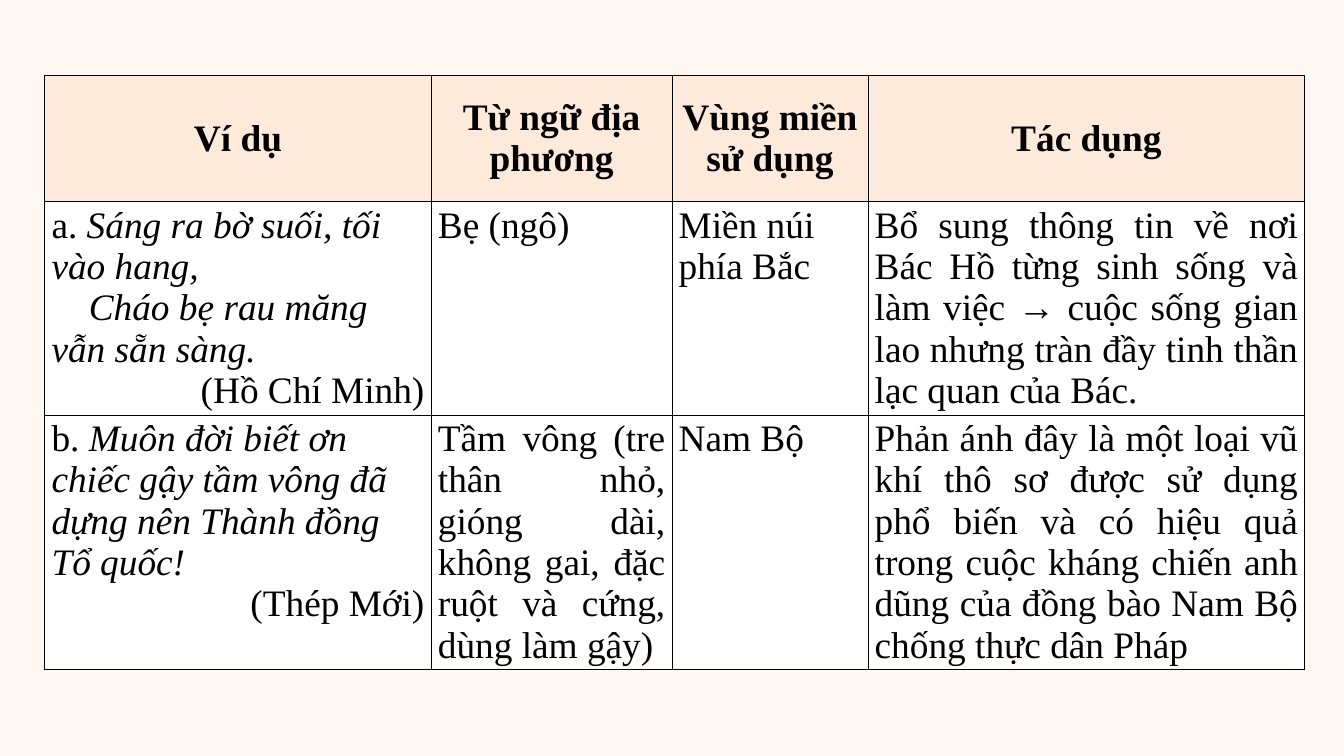
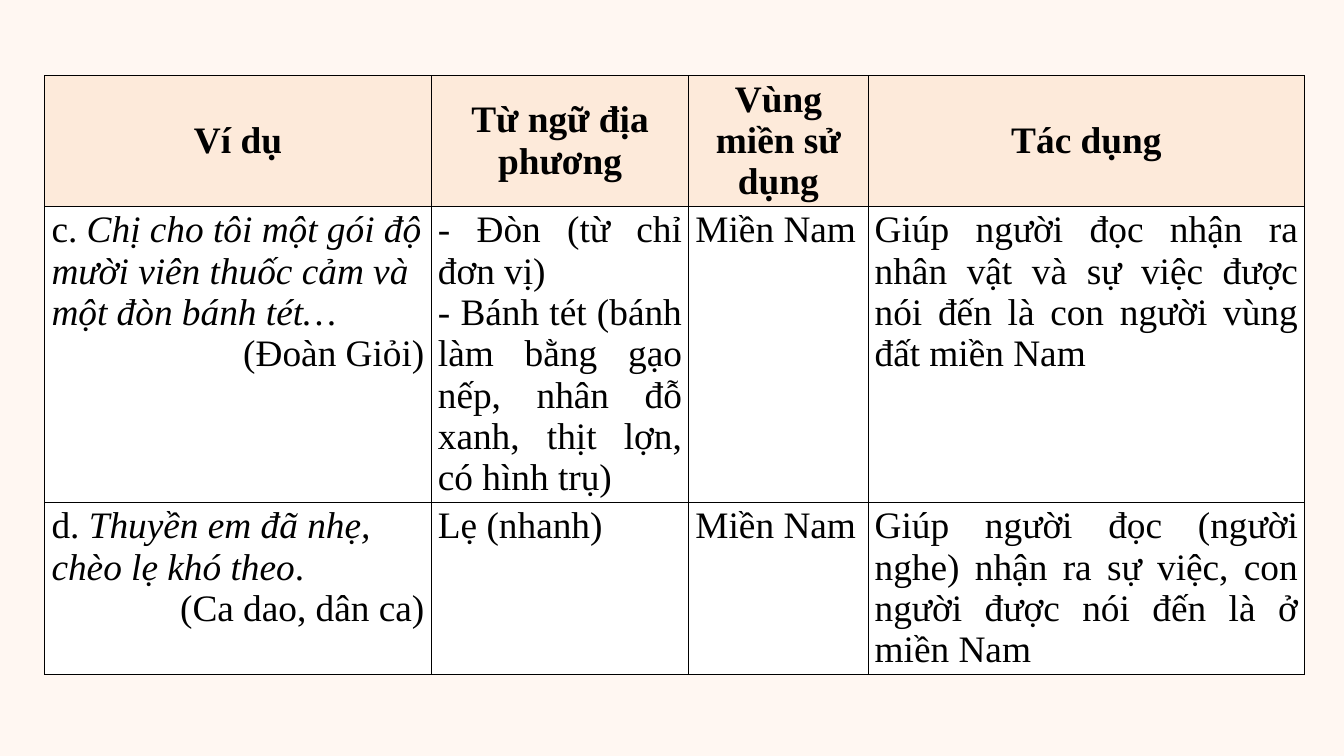
from dataclasses import dataclass

from lxml import etree
from pptx import Presentation
from pptx.dml.color import RGBColor
from pptx.enum import text
from pptx.oxml import ns
from pptx.util import Pt

# Shared look
CREAM = RGBColor(0xFF, 0xF7, 0xF2)
PEACH = RGBColor(0xFD, 0xEA, 0xDA)
WHITE = RGBColor(0xFF, 0xFF, 0xFF)
BLACK = RGBColor(0x00, 0x00, 0x00)
FONT = "Times New Roman"
SIZE = Pt(40)
BORDER = Pt(1)
LEFT, TOP, ROW_HEIGHT = Pt(48), Pt(81), Pt(135)
BLANK_LAYOUT = 6
ALIGN = text.PP_ALIGN


@dataclass(frozen=True)
class Span:
    words: str
    italic: bool = False
    bold: bool = False


@dataclass(frozen=True)
class Para:
    spans: tuple[Span, ...]
    align: ALIGN = ALIGN.LEFT
    indent: int = 0


Cell = tuple[Para, ...]


@dataclass(frozen=True)
class Grid:
    widths: tuple[int, ...]
    height: int
    rows: tuple[tuple[Cell, ...], ...]


# Kinds of cell
def plain(words: str, align: ALIGN = ALIGN.LEFT, bold: bool = False) -> Para:
    return Para((Span(words, bold=bold),), align)


def quote(label: str, words: str, end: str = "") -> Para:
    spans = (Span(f"{label}. "), Span(words, italic=True))
    return Para(spans + ((Span(end),) if end else ()))


def source(name: str) -> Para:
    return plain(f"({name})", ALIGN.RIGHT)


def justified(*lines: str) -> Cell:
    return tuple(plain(line, ALIGN.JUSTIFY) for line in lines)


HEADER = tuple(
    (plain(title, ALIGN.CENTER, bold=True),)
    for title in ("Ví dụ", "Từ ngữ địa phương", "Vùng miền sử dụng", "Tác dụng")
)

GRIDS = (
    Grid((414, 258, 210, 468), 678, (
        (
            (
                quote("a", "Sáng ra bờ suối, tối vào hang,"),
                Para((Span("Cháo bẹ rau măng vẫn sẵn sàng.", italic=True),), indent=40),
                source("Hồ Chí Minh"),
            ),
            justified("Bẹ (ngô)"),
            (plain("Miền núi phía Bắc"),),
            justified("Bổ sung thông tin về nơi Bác Hồ từng sinh sống và làm việc → "
                      "cuộc sống gian lao nhưng tràn đầy tinh thần lạc quan của Bác."),
        ),
        (
            (
                quote("b", "Muôn đời biết ơn chiếc gậy tầm vông đã dựng nên "
                           "Thành đồng Tổ quốc!"),
                source("Thép Mới"),
            ),
            justified("Tầm vông (tre thân nhỏ, gióng dài, không gai, "
                      "đặc ruột và cứng, dùng làm gậy)"),
            (plain("Nam Bộ"),),
            justified("Phản ánh đây là một loại vũ khí thô sơ được sử dụng phổ biến "
                      "và có hiệu quả trong cuộc kháng chiến anh dũng của đồng bào "
                      "Nam Bộ chống thực dân Pháp"),
        ),
    )),
    Grid((414, 276, 192, 468), 693, (
        (
            (
                quote("c", "Chị cho tôi một gói độ mười viên thuốc cảm "
                           "và một đòn bánh tét…"),
                source("Đoàn Giỏi"),
            ),
            justified("- Đòn (từ chỉ đơn vị)",
                      "- Bánh tét (bánh làm bằng gạo nếp, nhân đỗ xanh, "
                      "thịt lợn, có hình trụ)"),
            (plain("Miền Nam"),),
            justified("Giúp người đọc nhận ra nhân vật và sự việc được nói đến "
                      "là con người vùng đất miền Nam"),
        ),
        (
            (
                quote("d", "Thuyền em đã nhẹ, chèo lẹ khó theo", "."),
                source("Ca dao, dân ca"),
            ),
            justified("Lẹ (nhanh)"),
            (plain("Miền Nam"),),
            justified("Giúp người đọc (người nghe) nhận ra sự việc, con người "
                      "được nói đến là ở miền Nam"),
        ),
    )),
)


# Drawing
def add_borders(cell) -> None:
    properties = cell._tc.get_or_add_tcPr()
    for side in ("lnL", "lnR", "lnT", "lnB"):
        line = etree.SubElement(properties, ns.qn(f"a:{side}"), w=str(BORDER))
        fill = etree.SubElement(line, ns.qn("a:solidFill"))
        etree.SubElement(fill, ns.qn("a:srgbClr"), val=str(BLACK))


def write_cell(cell, content: Cell, is_header: bool) -> None:
    add_borders(cell)
    cell.fill.solid()
    cell.fill.fore_color.rgb = PEACH if is_header else WHITE
    cell.vertical_anchor = text.MSO_ANCHOR.MIDDLE if is_header else text.MSO_ANCHOR.TOP
    frame = cell.text_frame
    for index, para in enumerate(content):
        paragraph = frame.add_paragraph() if index else frame.paragraphs[0]
        paragraph.alignment = para.align
        if para.indent:
            paragraph._p.get_or_add_pPr().set("indent", str(Pt(para.indent)))
        for span in para.spans:
            run = paragraph.add_run()
            run.text = span.words
            run.font.name = FONT
            run.font.size = SIZE
            run.font.bold = span.bold
            run.font.italic = span.italic
            run.font.color.rgb = BLACK


def add_grid(deck, grid: Grid) -> None:
    slide = deck.slides.add_slide(deck.slide_layouts[BLANK_LAYOUT])
    slide.background.fill.solid()
    slide.background.fill.fore_color.rgb = CREAM

    rows = (HEADER, *grid.rows)
    holder = slide.shapes.add_table(
        len(rows), len(HEADER), LEFT, TOP, Pt(sum(grid.widths)), Pt(grid.height))
    table = holder.table
    table.first_row = table.horz_banding = False
    for column, width in zip(table.columns, grid.widths):
        column.width = Pt(width)
    for row_index, row in enumerate(rows):
        table.rows[row_index].height = ROW_HEIGHT
        for column_index, content in enumerate(row):
            write_cell(table.cell(row_index, column_index), content, row_index == 0)
    holder.height = Pt(grid.height)


def main() -> None:
    deck = Presentation()
    deck.slide_width, deck.slide_height = Pt(1440), Pt(810)
    for grid in GRIDS:
        add_grid(deck, grid)
    deck.save("out.pptx")


if __name__ == "__main__":
    main()
